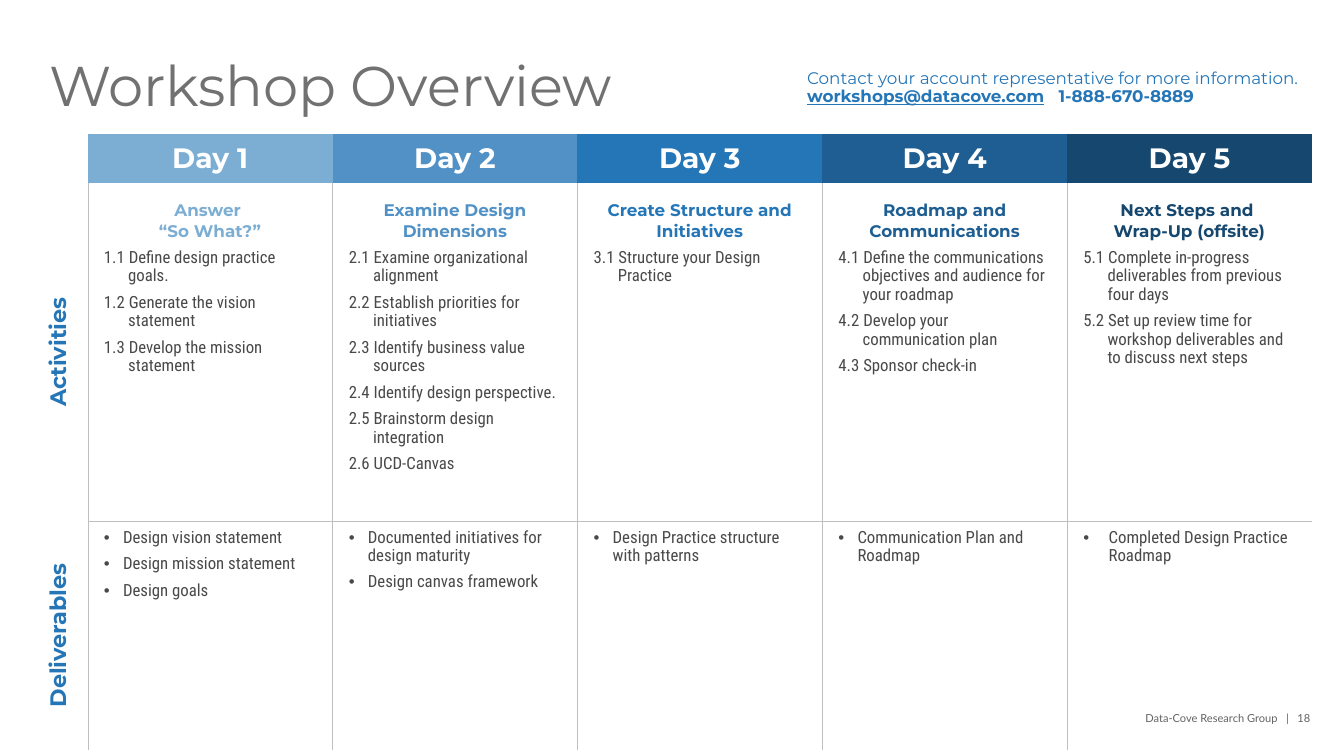
import pptx
import pptx.dml.color
import pptx.enum.text
from lxml import etree
from pptx.oxml.ns import qn
from pptx.util import Cm, Pt

ALIGN = pptx.enum.text.PP_ALIGN
ANCHOR = pptx.enum.text.MSO_ANCHOR
HEAD, BODY, FOOT = "Montserrat", "Roboto Condensed", "Lato"
BLUE, GREY, INK, RULE = "2576B7", "717171", "494949", "BFBFBF"

# name, colour, focus, activities, deliverables
DAYS = [
    ("Day 1", "7CAED4", "Answer \v“So What?”",
     ["1.1 Define design practice goals.",
      "1.2 Generate the vision statement",
      "1.3 Develop the mission statement"],
     ["Design vision statement", "Design mission statement", "Design goals"]),
    ("Day 2", "5191C5", "Examine Design Dimensions",
     ["2.1 Examine organizational alignment",
      "2.2 Establish priorities for initiatives",
      "2.3 Identify business value sources",
      "2.4 Identify design perspective.",
      "2.5 Brainstorm design integration",
      "2.6 UCD-Canvas"],
     ["Documented initiatives for design maturity", "Design canvas framework"]),
    ("Day 3", BLUE, "Create Structure and Initiatives",
     ["3.1 Structure your Design Practice"],
     ["Design Practice structure with patterns"]),
    ("Day 4", "1E5E92", "Roadmap and Communications",
     ["4.1 Define the communications objectives and audience for your roadmap",
      "4.2 Develop your communication plan",
      "4.3 Sponsor check-in"],
     ["Communication Plan and Roadmap"]),
    ("Day 5", "16476E", "Next Steps and \vWrap-Up (offsite)",
     ["5.1 Complete in-progress deliverables from previous four days",
      "5.2 Set up review time for workshop deliverables and to discuss next steps"],
     ["Completed Design Practice Roadmap"]),
]


def tint(code):
    return pptx.dml.color.RGBColor.from_string(code)


def style(run, face, size, color, bold=False):
    font = run.font
    font.name, font.size, font.bold = face, Pt(size), bold
    font.color.rgb = tint(color)


def indent(para, left, first):
    props = para._p.get_or_add_pPr()
    props.set("marL", str(Cm(left)))
    props.set("indent", str(Cm(first)))
    return props


class Deck:
    def __init__(self):
        self.prs = pptx.Presentation()
        self.prs.slide_width, self.prs.slide_height = Cm(33.87), Cm(19.05)
        self.slide = self.prs.slides.add_slide(self.prs.slide_layouts[5])

    def title(self, text, box):
        shape = self.slide.shapes.title
        shape.left, shape.top, shape.width, shape.height = map(Cm, box)
        frame = shape.text_frame
        frame.text = text
        frame.auto_size = pptx.enum.text.MSO_AUTO_SIZE.NONE
        frame.vertical_anchor = ANCHOR.MIDDLE
        para = frame.paragraphs[0]
        para.alignment, para.line_spacing = ALIGN.LEFT, 0.9
        style(para.runs[0], HEAD, 40, GREY)

    def text(self, text, box, face, size, color):
        frame = self.slide.shapes.add_textbox(*map(Cm, box)).text_frame
        frame.word_wrap = True
        frame.text = text
        for para in frame.paragraphs:
            style(para.runs[0], face, size, color)
        return frame

    def table(self, box, cols, rows):
        shape = self.slide.shapes.add_table(len(rows), len(cols), *map(Cm, box))
        grid = shape.table
        grid.first_row = grid.horz_banding = False
        # built-in style without fills or grid lines
        grid._tbl.tblPr.find(qn("a:tableStyleId")).text = \
            "{2D5ABB26-0587-4C30-8999-92F81FD0307C}"
        for col, width in zip(grid.columns, cols):
            col.width = Cm(width)
        for row, height in zip(grid.rows, rows):
            row.height = Cm(height)
        return grid

    def cell(self, cell, sides="", fill=None, pad=(0.25, 0.13, 0.25, 0.13)):
        """Draw the rules on the given sides (of L, R, T, B), then fill and pad."""
        props = cell._tc.get_or_add_tcPr()
        for side in sides:
            line = etree.SubElement(props, qn("a:ln" + side), w=str(Pt(0.25)))
            solid = etree.SubElement(line, qn("a:solidFill"))
            etree.SubElement(solid, qn("a:srgbClr"), val=RULE)
        if fill:
            cell.fill.solid()
            cell.fill.fore_color.rgb = tint(fill)
        else:
            cell.fill.background()
        (cell.margin_left, cell.margin_top,
         cell.margin_right, cell.margin_bottom) = map(Cm, pad)

    def head(self, cell, text, size, color, pitch=None):
        cell.text_frame.text = text
        para = cell.text_frame.paragraphs[0]
        para.alignment = ALIGN.CENTER
        if pitch:
            para.line_spacing = Pt(pitch)
        for run in para.runs:
            style(run, HEAD, size, color, True)
        return para

    def label(self, cell, text):
        """Write a row label that reads upwards."""
        self.cell(cell, "R")
        cell.vertical_anchor = ANCHOR.MIDDLE
        cell._tc.get_or_add_tcPr().set("vert", "vert270")
        para = self.head(cell, text, 16, BLUE)
        para.space_after = Pt(5)
        indent(para, 0.61, -1.27)

    def items(self, cell, lines, left, first, mark=None):
        cell.text_frame.text = "\n".join(lines)
        for para in cell.text_frame.paragraphs:
            para.line_spacing, para.space_before = Pt(13), Pt(6)
            props = indent(para, left, first)
            if mark:
                etree.SubElement(props, qn("a:buFont"), typeface="Arial")
                etree.SubElement(props, qn("a:buChar"), char=mark)
            style(para.runs[0], BODY, 12, INK)


def main():
    deck = Deck()
    deck.title("Workshop Overview", (0.99, 1.47, 23.95, 1.5))

    grid = deck.table((0.99, 3.38, 32.07, 14.5),
                      [1.22] + [6.17] * len(DAYS), [1.24, 1.42, 7.04, 4.8])
    deck.cell(grid.cell(0, 0))
    grid.cell(1, 0).merge(grid.cell(2, 0))
    deck.label(grid.cell(1, 0), "Activities")
    deck.label(grid.cell(3, 0), "Deliverables")

    pad = (0.41, 0.2, 0.41, 0.3)
    for col, (name, color, focus, tasks, goods) in enumerate(DAYS, 1):
        top, aim, work, yield_ = (grid.cell(row, col) for row in range(4))
        last = col == len(DAYS)
        sides = "L" if last else "LR"

        deck.cell(top, fill=color)
        top.vertical_anchor = ANCHOR.MIDDLE
        deck.head(top, name, 20, "FFFFFF")

        deck.cell(aim, sides, pad=(0.3, 0.41, 0.3, 0))
        deck.head(aim, focus, 12, color, 15)

        deck.cell(work, sides + "B", pad=pad)
        deck.items(work, tasks, 0.61, -1.27)

        deck.cell(yield_, sides + "T", pad=pad)
        hang = 0.64 if last else 0.48
        deck.items(yield_, goods, hang, -hang, "•")

    note = deck.text("Contact your account representative for more information.\n"
                     "workshops@datacove.com", (20.09, 1.63, 12.93, 1.22),
                     HEAD, 12, BLUE)
    for para in note.paragraphs:
        para.line_spacing = 0.9
    reach = note.paragraphs[1]
    reach.runs[0].font.bold = reach.runs[0].font.underline = True
    phone = reach.add_run()
    phone.text = "   1-888-670-8889"
    style(phone, HEAD, 12, BLUE, True)

    foot = deck.text("Data-Cove Research Group   |   18", (26.8, 17.93, 6.22, 0.33),
                     FOOT, 7.9, "636363")
    foot.margin_left = foot.margin_top = foot.margin_right = foot.margin_bottom = 0
    foot.paragraphs[0].alignment = ALIGN.RIGHT

    deck.prs.save("out.pptx")


if __name__ == "__main__":
    main()
